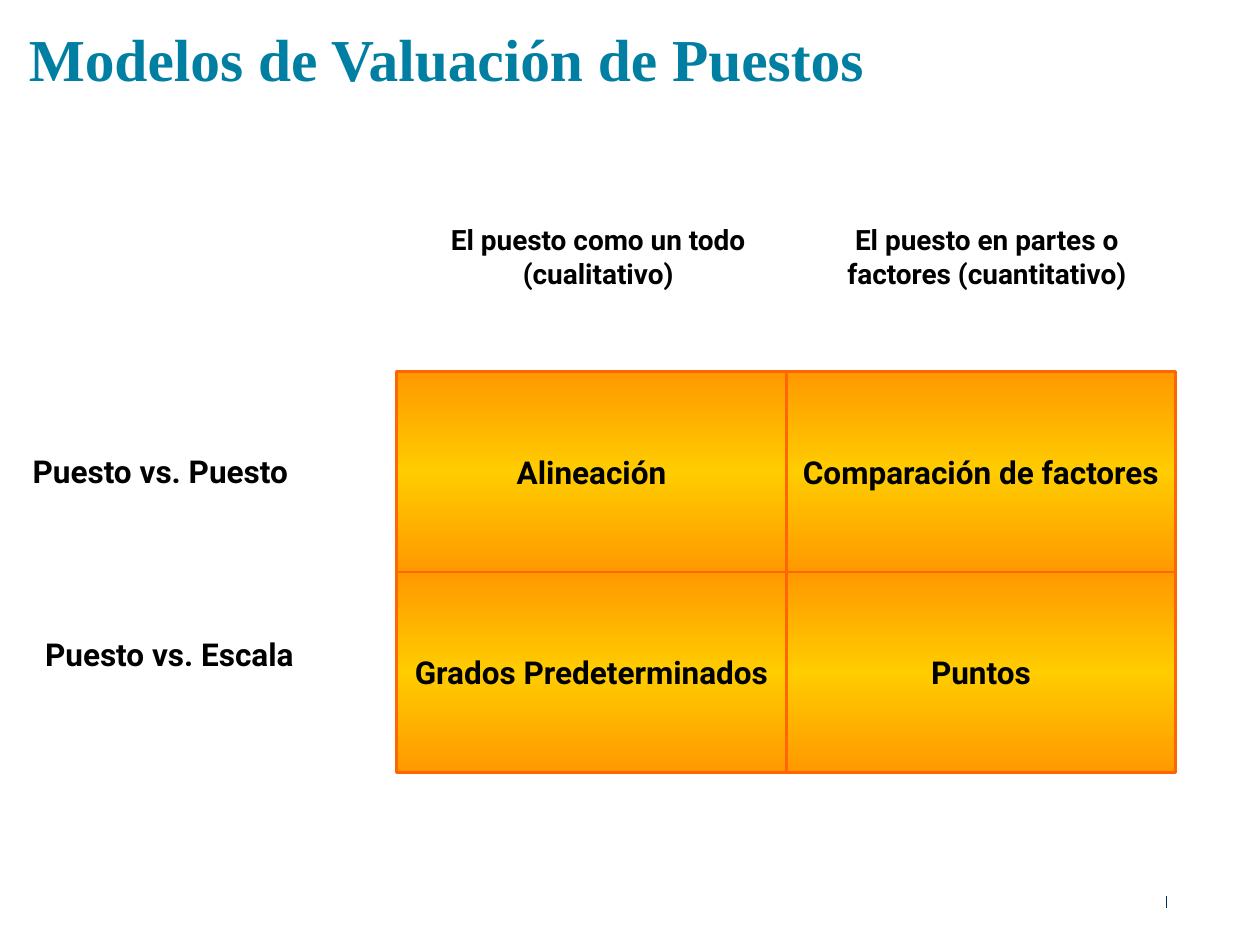
from copy import deepcopy

from pptx import Presentation
from pptx.dml.color import RGBColor
from pptx.enum.shapes import MSO_CONNECTOR, MSO_SHAPE
from pptx.enum.text import MSO_ANCHOR, PP_ALIGN
from pptx.oxml.ns import qn
from pptx.util import Cm, Pt
from lxml.etree import SubElement

COLORS = {name: RGBColor.from_string(code) for name, code in {
    "title": "007FA3", "text": "000000", "edge": "FF9900",
    "glow": "FFCC00", "border": "FF6600", "mark": "003057"}.items()}
TITLE_FONT = {"name": "Times New Roman", "size": Pt(34), "bold": True}
LABEL_FONT = {"name": "Roboto", "size": Pt(18), "bold": True}
HEADER_FONT = {**LABEL_FONT, "size": Pt(16)}
MODELS = [["Alineación", "Comparación de factores"],
          ["Grados Predeterminados", "Puntos"]]
HEADERS = [("El puesto como un todo (cualitativo)", (0.53, 0, 7.06, 3.12)),
           ("El puesto en partes o factores (cuantitativo)", (8.1, 0, 7.59, 3.12))]
COMPARISONS = [("Puesto vs. Puesto", (0, 0, 7.85, 1.4)),
               ("Puesto vs. Escala", (0.25, 3.68, 7.59, 1.4))]


def write(frame, text, font, color, align=PP_ALIGN.LEFT):
    """Fill a text frame with one formatted paragraph."""
    frame.word_wrap = True
    frame.text = text
    paragraph = frame.paragraphs[0]
    paragraph.alignment = align
    for key, value in font.items():
        setattr(paragraph.font, key, value)
    paragraph.font.color.rgb = COLORS[color]
    return paragraph


def add_title(slide, text, box):
    """Place the slide title in its placeholder."""
    title = slide.shapes.title
    for side, value in zip(("left", "top", "width", "height"), box):
        setattr(title, side, Cm(value))
    frame = title.text_frame
    for side in ("left", "top", "right", "bottom"):
        setattr(frame, f"margin_{side}", 0)
    frame.vertical_anchor = MSO_ANCHOR.TOP
    write(frame, text, TITLE_FONT, "title").line_spacing = Pt(19)


def add_labels(slide, labels, origin, font, align):
    """Place text labels relative to a common origin."""
    left, top = origin
    for text, (x, y, width, height) in labels:
        label = slide.shapes.add_textbox(Cm(left + x), Cm(top + y), Cm(width), Cm(height))
        write(label.text_frame, text, font, "text", align)


def paint_gradient(fill):
    """Give a fill a vertical gradient that glows in the middle."""
    fill.gradient()
    fill.gradient_angle = 90
    first = fill.gradient_stops[0]
    first.color.rgb = COLORS["edge"]
    fill.gradient_stops[1].color.rgb = COLORS["edge"]


def add_matrix(slide, models, box):
    """Draw the grid of valuation models inside a box."""
    left, top, width, height = box
    cell_width, cell_height = width / len(models[0]), height / len(models)
    for row, names in enumerate(models):
        for column, name in enumerate(names):
            cell = slide.shapes.add_shape(
                MSO_SHAPE.FLOWCHART_PROCESS,
                Cm(left + column * cell_width), Cm(top + row * cell_height),
                Cm(cell_width), Cm(cell_height))
            cell.shadow.inherit = False
            paint_gradient(cell.fill)
            stops = cell.element.spPr.find(qn("a:gradFill")).find(qn("a:gsLst"))
            stops.insert(1, deepcopy(stops[0]))
            middle = cell.fill.gradient_stops[1]
            middle.position = 0.5
            middle.color.rgb = COLORS["glow"]
            cell.line.color.rgb = COLORS["border"]
            cell.line.width = Pt(1.5)
            cell.text_frame.vertical_anchor = MSO_ANCHOR.MIDDLE
            write(cell.text_frame, name, LABEL_FONT, "text", PP_ALIGN.CENTER)


def add_footer_mark(slide, x, top, height):
    """Draw the short vertical rule of the footer."""
    mark = slide.shapes.add_connector(
        MSO_CONNECTOR.STRAIGHT, Cm(x), Cm(top), Cm(x), Cm(top + height))
    mark.line.color.rgb = COLORS["mark"]
    mark.line.width = Pt(0.5)
    SubElement(mark.element.spPr, qn("a:effectLst"))


def main():
    """Build and save the slide."""
    deck = Presentation()
    deck.slide_width, deck.slide_height = Cm(25.4), Cm(19.05)
    slide = deck.slides.add_slide(deck.slide_layouts[5])
    add_footer_mark(slide, 23.52, 18.06, 0.25)
    add_title(slide, "Modelos de Valuación de Puestos", (0.58, 1.22, 25.3, 1.83))
    add_matrix(slide, MODELS, (8, 7.49, 15.7, 8.08))
    add_labels(slide, HEADERS, (8, 4.37), HEADER_FONT, PP_ALIGN.CENTER)
    add_labels(slide, COMPARISONS, (0.41, 8.99), LABEL_FONT, PP_ALIGN.LEFT)
    deck.save("out.pptx")


if __name__ == "__main__":
    main()
